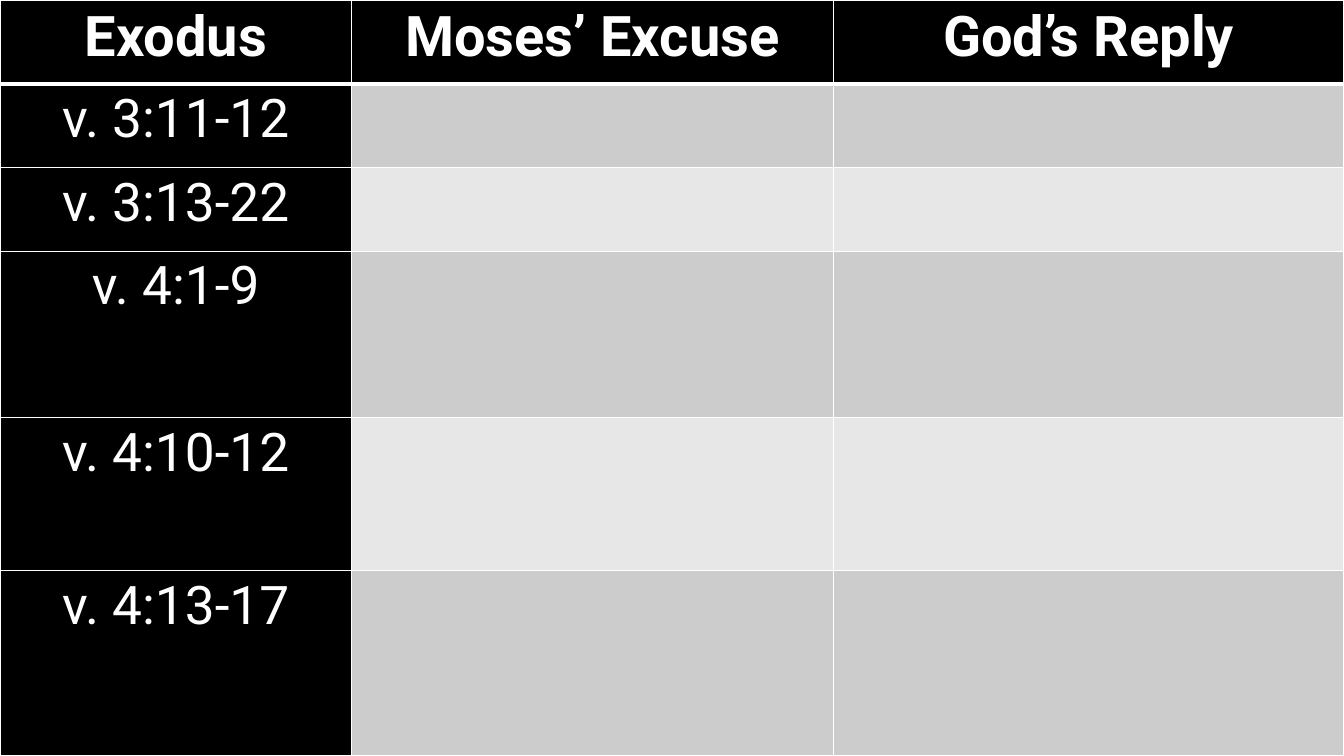
from lxml import etree
from pptx import Presentation
from pptx.dml.color import RGBColor
from pptx.enum.text import PP_ALIGN
from pptx.oxml.ns import qn
from pptx.util import Cm, Pt

CENTER = PP_ALIGN.CENTER
FONT = "Roboto"
BLACK, WHITE = "000000", "FFFFFF"
BANDS = ["CCCCCC", "E7E7E7"]

ROWS = [
    ("Exodus", "Moses’ Excuse", "God’s Reply"),
    ("v. 3:11-12", "", ""),
    ("v. 3:13-22", "", ""),
    ("v. 4:1-9", "", ""),
    ("v. 4:10-12", "", ""),
    ("v. 4:13-17", "", ""),
]
COL_WIDTHS = [8.86, 12.14, 12.87]
ROW_HEIGHTS = [2.11, 2.11, 2.11, 4.19, 3.86, 4.67]


def paint(fill, color):
    fill.solid()
    fill.fore_color.rgb = RGBColor.from_string(color)


def add_borders(cell, bottom):
    tcPr = cell._tc.get_or_add_tcPr()
    for side, width in (("L", 1), ("R", 1), ("T", 1), ("B", bottom)):
        ln = etree.SubElement(tcPr, qn("a:ln" + side), w=str(Pt(width)))
        solid = etree.SubElement(ln, qn("a:solidFill"))
        etree.SubElement(solid, qn("a:srgbClr"), val=WHITE)


def fill_cell(cell, text, row, col):
    header = row == 0
    add_borders(cell, 3 if header else 1)
    paint(cell.fill, BLACK if header or col == 0 else BANDS[(row - 1) % 2])
    if not text:
        return
    cell.margin_left = cell.margin_right = Cm(0.18)
    cell.margin_top = cell.margin_bottom = 0
    p = cell.text_frame.paragraphs[0]
    p.text = text
    p.alignment = CENTER
    p.line_spacing = 1.07
    p.font.name = FONT
    p.font.size = Pt(40 if header else 38)
    p.font.bold = header
    paint(p.font.fill, WHITE)


prs = Presentation()
prs.slide_width, prs.slide_height = Cm(33.87), Cm(19.05)
s = prs.slides.add_slide(prs.slide_layouts[6])
paint(s.background.fill, BLACK)

table = s.shapes.add_table(len(ROWS), len(COL_WIDTHS), 0, 0,
                           prs.slide_width, prs.slide_height).table
for column, width in zip(table.columns, COL_WIDTHS):
    column.width = Cm(width)
for row, height in zip(table.rows, ROW_HEIGHTS):
    row.height = Cm(height)
for i, texts in enumerate(ROWS):
    for j, text in enumerate(texts):
        fill_cell(table.cell(i, j), text, i, j)

prs.save("out.pptx")
